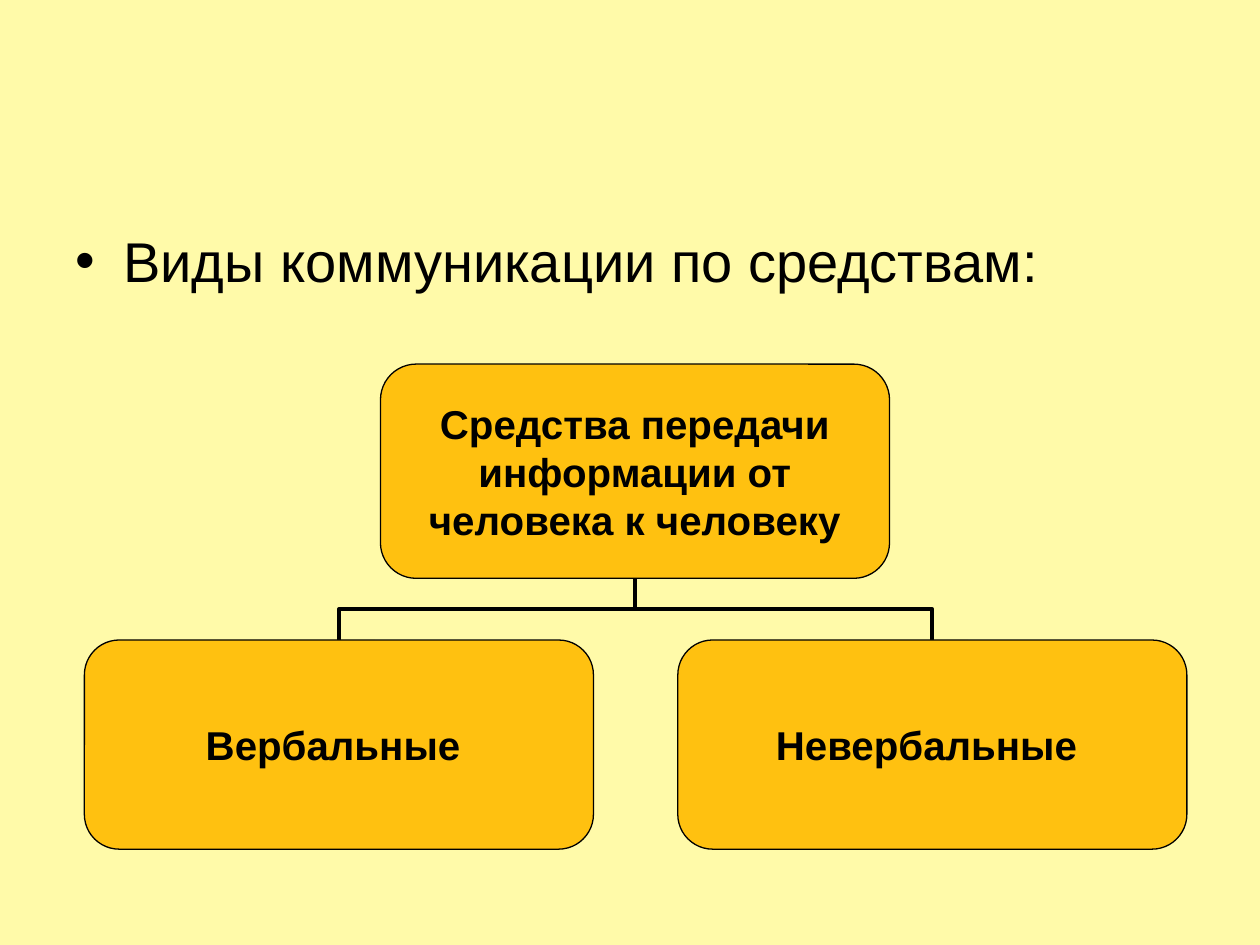
"""Builds a slide with a small tree of the means of communication."""
from lxml import etree
from pptx import Presentation
from pptx.dml.color import RGBColor
from pptx.enum import shapes, text
from pptx.oxml.ns import qn
from pptx.util import Inches, Pt

CREAM = RGBColor(0xFF, 0xFA, 0xA9)
AMBER = RGBColor(0xFF, 0xC1, 0x10)
BLACK = RGBColor(0, 0, 0)
WIDE = 4.04
ROOT = (5.04, 2.89, 1.7)
LOW = 5.08
KIDS = ((2.69, "Вербальные "), (7.4, "Невербальные "))


def style(para, size, bold=False):
    font = para.font
    font.name, font.size, font.bold = "Arial", Pt(size), bold
    font.color.rgb = BLACK


def add_link(slide, kid, root, base):
    rise, span = LOW - base, abs(kid - root)
    mid, level = (kid + root) / 2, (LOW + base) / 2
    side = 1 if kid < root else -1
    link = slide.shapes.add_connector(
        shapes.MSO_CONNECTOR.ELBOW,
        Inches(mid + side * rise / 2), Inches(level + span / 2),
        Inches(mid - side * rise / 2), Inches(level - span / 2))
    link.line.color.rgb = BLACK
    link.line.width = Pt(2.25)
    props = link._element.spPr
    props.find(qn("a:xfrm")).set("rot", str(side * 90 % 360 * 60000))
    etree.SubElement(props, qn("a:effectLst"))


def add_box(slide, mid, top, high, label, wrap):
    box = slide.shapes.add_shape(
        shapes.MSO_SHAPE.ROUNDED_RECTANGLE, Inches(mid - WIDE / 2),
        Inches(top), Inches(WIDE), Inches(high))
    box.shadow.inherit = False
    box.fill.solid()
    box.fill.fore_color.rgb = AMBER
    box.line.color.rgb = BLACK
    box.line.width = Pt(0.75)
    frame = box.text_frame
    frame.margin_left = frame.margin_right = 0
    frame.margin_top = frame.margin_bottom = 0
    frame.vertical_anchor = text.MSO_ANCHOR.MIDDLE
    frame.word_wrap = wrap
    para = frame.paragraphs[0]
    para.text = label
    para.alignment = text.PP_ALIGN.CENTER
    style(para, 23, True)


def add_point(slide, label):
    box = slide.shapes.add_textbox(
        Inches(0.5), Inches(1.75), Inches(8.28), Inches(1.21))
    box.text_frame.word_wrap = True
    para = box.text_frame.paragraphs[0]
    para.text = label
    props = para._p.get_or_add_pPr()
    props.set("marL", str(Inches(0.38)))
    props.set("indent", str(Inches(-0.38)))
    etree.SubElement(props, qn("a:buFont"), typeface="Arial")
    etree.SubElement(props, qn("a:buChar"), char="•")
    style(para, 32)


def main():
    deck = Presentation()
    deck.slide_width, deck.slide_height = Inches(10), Inches(7.5)
    slide = deck.slides.add_slide(deck.slide_layouts[6])
    slide.background.fill.solid()
    slide.background.fill.fore_color.rgb = CREAM
    root, top, high = ROOT
    for mid, _ in KIDS:
        add_link(slide, mid, root, top + high)
    add_box(slide, root, top, high,
            "Средства передачи информации от человека к человеку", True)
    for mid, label in KIDS:
        add_box(slide, mid, LOW, 1.66, label, False)
    add_point(slide, "Виды коммуникации по средствам:")
    deck.save("out.pptx")


if __name__ == "__main__":
    main()
